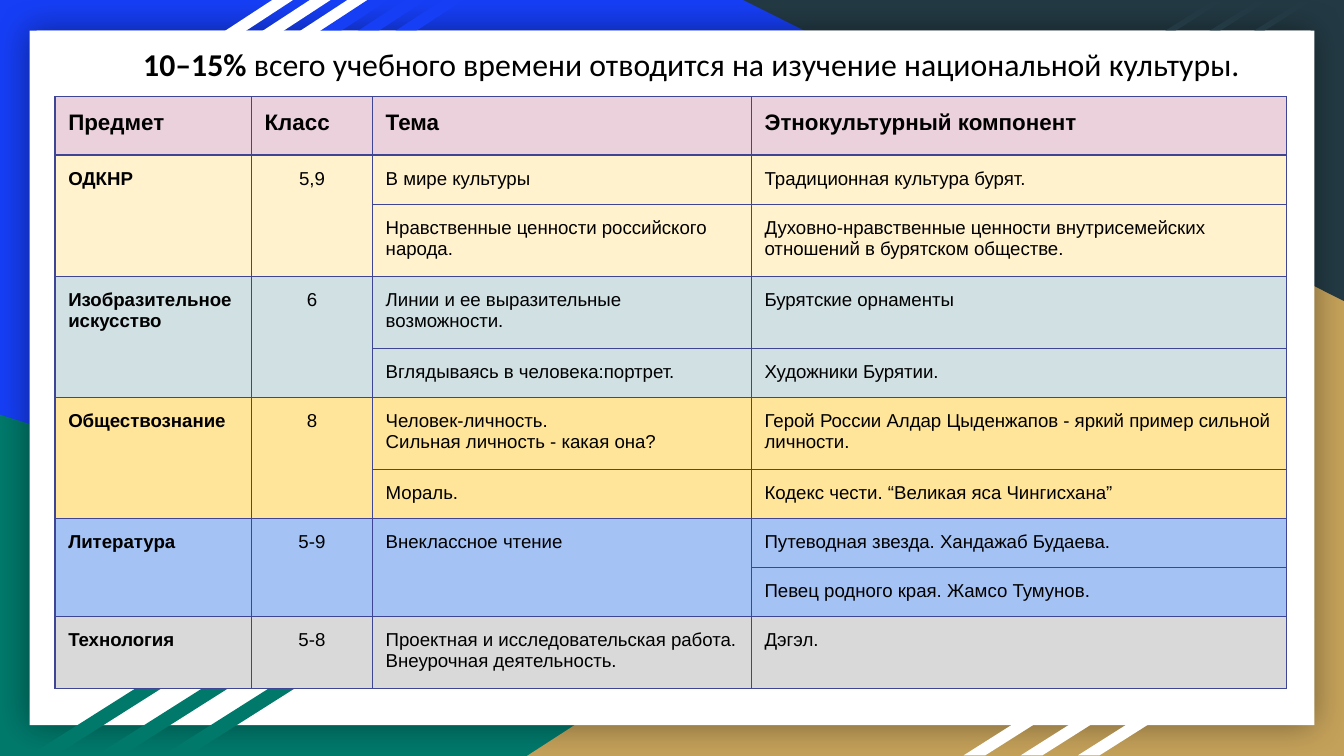
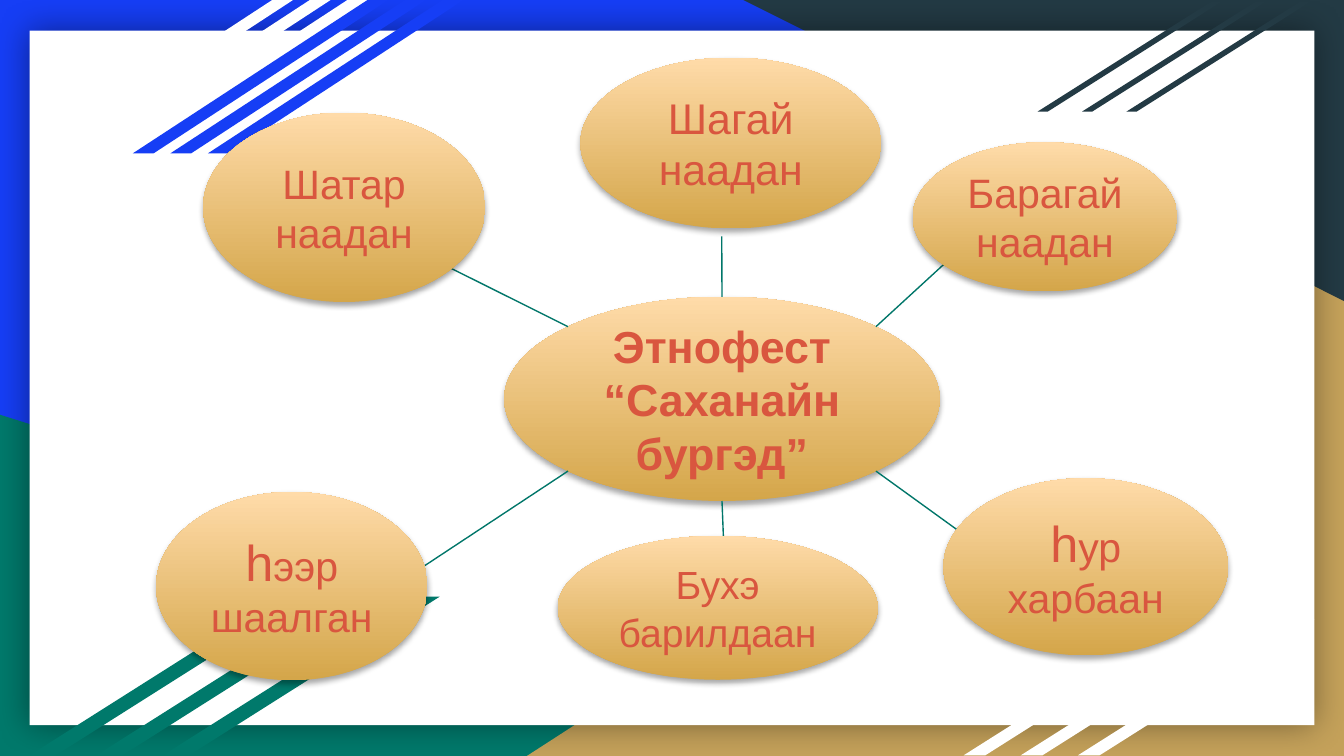
"""Build two slides on Buryat culture at school: a lesson table and a festival map."""
from dataclasses import dataclass
from math import cos, radians, sin
from typing import NamedTuple, Optional

from lxml import etree
from pptx import Presentation
from pptx.dml.color import RGBColor
from pptx.enum.shapes import MSO_CONNECTOR, MSO_SHAPE
from pptx.enum.text import MSO_ANCHOR, MSO_AUTO_SIZE, PP_ALIGN
from pptx.oxml.ns import qn
from pptx.slide import Slide
from pptx.util import Cm, Pt

TRIANGLE, PARALLELOGRAM = MSO_SHAPE.RIGHT_TRIANGLE, MSO_SHAPE.PARALLELOGRAM
RECTANGLE, OVAL = MSO_SHAPE.RECTANGLE, MSO_SHAPE.OVAL
STRAIGHT = MSO_CONNECTOR.STRAIGHT
CENTER, LEFT = PP_ALIGN.CENTER, PP_ALIGN.LEFT
MIDDLE = MSO_ANCHOR.MIDDLE
NO_FIT = MSO_AUTO_SIZE.NONE

BLUE = RGBColor(0x16, 0x3E, 0xF5)
GREEN = RGBColor(0x00, 0x79, 0x6B)
SAND = RGBColor(0xC4, 0xA1, 0x5A)
SLATE = RGBColor(0x23, 0x3A, 0x44)
WHITE = RGBColor(0xFF, 0xFF, 0xFF)
BLACK = RGBColor(0x00, 0x00, 0x00)
GRID = RGBColor(0x3D, 0x45, 0x94)
ROSE = RGBColor(0xEA, 0xD1, 0xDC)
CREAM = RGBColor(0xFF, 0xF2, 0xCC)
MIST = RGBColor(0xD0, 0xE0, 0xE3)
YELLOW = RGBColor(0xFF, 0xE5, 0x99)
SKY = RGBColor(0xA4, 0xC2, 0xF4)
GREY = RGBColor(0xD9, 0xD9, 0xD9)
GOLD = RGBColor(0xD4, 0xA6, 0x4A)
PEACH = RGBColor(0xFF, 0xDB, 0xA9)
CORAL = RGBColor(0xD9, 0x56, 0x3F)
RAY = RGBColor(0x00, 0x76, 0x69)

BODY_FONT, TITLE_FONT = "Arial", "Calibri"
TITLE_ONLY, BLANK = 5, 6


class Frame(NamedTuple):
    """Position and size in centimetres."""
    left: float
    top: float
    width: float
    height: float

    def lengths(self) -> list[Cm]:
        """Return the four values as lengths."""
        return [Cm(value) for value in self]


class Span(NamedTuple):
    """A piece of text in one format."""
    text: str
    size: float
    bold: bool = False


@dataclass(frozen=True)
class Stripes:
    """Three slanted bars at an equal step."""
    first: Frame
    step: float
    slant: float
    colour: RGBColor


@dataclass(frozen=True)
class Subject:
    """A school subject with its (topic, component) lessons."""
    name: str
    grade: str
    colour: RGBColor
    lessons: list[tuple[str, str]]


@dataclass(frozen=True)
class Game:
    """A game bubble and the ray that leads to it from the hub."""
    frame: Frame
    spans: list[Span]
    ray_angle: Optional[float] = None
    ray_tip: tuple[float, float] = (0, 0)


STRIPES = [
    Stripes(Frame(0.71, 0, 4.83, 2.9), 0.71, 1.53, WHITE),
    Stripes(Frame(2.51, 0, 4.83, 2.9), 0.71, 1.53, BLUE),
    Stripes(Frame(19.61, 0.03, 3.48, 2.08), 0.84, 1.58, SLATE),
    Stripes(Frame(18.21, 11.71, 4.47, 2.57), 1.08, 1.58, WHITE),
    Stripes(Frame(0.56, 11.28, 5.23, 3), 1.26, 1.58, GREEN),
]

HEADINGS = ["Предмет", "Класс", "Тема", "Этнокультурный компонент"]
SUBJECTS = [
    Subject("ОДКНР", "5,9", CREAM, [
        ("В мире культуры", "Традиционная культура бурят."),
        ("Нравственные ценности российского народа.",
         "Духовно-нравственные ценности внутрисемейских отношений в бурятском обществе."),
    ]),
    Subject("Изобразительное искусство", "6", MIST, [
        ("Линии и ее выразительные возможности.", "Бурятские орнаменты"),
        ("Вглядываясь в человека:портрет.", "Художники Бурятии."),
    ]),
    Subject("Обществознание", "8", YELLOW, [
        ("Человек-личность.\nСильная личность - какая она?",
         "Герой России Алдар Цыденжапов - яркий пример сильной личности."),
        ("Мораль.", "Кодекс чести. “Великая яса Чингисхана”"),
    ]),
    Subject("Литература", "5-9", SKY, [
        ("Внеклассное чтение", "Путеводная звезда. Хандажаб Будаева."),
        ("", "Певец родного края. Жамсо Тумунов."),
    ]),
    Subject("Технология", "5-8", GREY, [
        ("Проектная и исследовательская работа. Внеурочная деятельность.", "Дэгэл."),
    ]),
]
COLUMN_WIDTHS = [3.71, 2.29, 7.16, 10.11]
HEAD, SINGLE, DOUBLE = 1.1, 0.93, 1.36
ROW_HEIGHTS = [HEAD, SINGLE, DOUBLE, DOUBLE, SINGLE, DOUBLE, SINGLE, SINGLE, SINGLE, DOUBLE]

HUB = Game(Frame(9.53, 5.61, 8.23, 3.86), [Span("Этнофест “Саханайн бургэд”", 24, True)])
GAMES = [
    Game(Frame(17.25, 2.69, 5, 2.82), [Span("Барагай наадан", 22)], -45, (18.16, 4.7)),
    Game(Frame(10.97, 1.09, 5.69, 3.23), [Span("Шагай наадан", 23)], -90, (13.64, 4.47)),
    Game(Frame(3.84, 2.13, 5.33, 3.58), [Span("Шатар наадан", 22)], -135, (7.98, 4.8)),
    Game(Frame(2.95, 9.3, 5.13, 3.56), [Span("h", 27), Span("ээр шаалган", 22)],
         135, (8.03, 10.69)),
    Game(Frame(10.54, 10.13, 6.05, 2.72), [Span("Бухэ барилдаан", 21)], 90, (13.69, 10.62)),
    Game(Frame(17.83, 9.04, 5.38, 3.35), [Span("h", 27), Span("ур харбаан", 22)],
         45, (18.36, 10.21)),
]


def write_spans(para, spans: list[Span], font: str, colour: RGBColor, align=CENTER) -> None:
    """Fill a paragraph with formatted spans."""
    para.text = spans[0].text
    for span in spans[1:]:
        para.add_run().text = span.text
    para.alignment = align
    for run, span in zip(para.runs, spans):
        run.font.name, run.font.size, run.font.bold = font, Pt(span.size), span.bold
        run.font.color.rgb = colour


def add_figure(page: Slide, kind, frame: Frame, colour: RGBColor):
    """Add a flat preset shape without outline or shadow."""
    shape = page.shapes.add_shape(kind, *frame.lengths())
    shape.shadow.inherit = False
    shape.fill.solid()
    shape.fill.fore_color.rgb = colour
    shape.line.fill.background()
    return shape


def cast_shadow(shape, alpha: int, blur: float, distance: float, angle: int) -> None:
    """Give a shape a black outer shadow."""
    effects = shape.element.spPr.find(qn("a:effectLst"))
    shadow = etree.SubElement(effects, qn("a:outerShdw"), blurRad=str(Pt(blur)),
                              dist=str(Pt(distance)), dir=str(angle * 60000),
                              algn="bl", rotWithShape="0")
    tint = etree.SubElement(shadow, qn("a:srgbClr"), val=str(BLACK))
    etree.SubElement(tint, qn("a:alpha"), val=str(alpha * 1000))


def decorate_master(deck, page: Slide) -> None:
    """Draw the shared backdrop and move it to the slide master."""
    green = add_figure(page, TRIANGLE, Frame(0, 7.84, 20.47, 6.45), GREEN)
    sand = add_figure(page, TRIANGLE, Frame(9.96, 4.31, 15.44, 9.98), SAND)
    sand.element.spPr.xfrm.set("flipH", "1")
    slate = add_figure(page, TRIANGLE, Frame(14.05, 0, 11.35, 5.69), SLATE)
    slate.rotation = 180
    panel = add_figure(page, RECTANGLE, Frame(0.56, 0.58, 24.28, 13.13), WHITE)
    cast_shadow(panel, 40, 18, 0, 0)
    figures = [green, sand, slate, panel]
    for stripes in STRIPES:
        for index in range(3):
            left = stripes.first.left + index * stripes.step
            bar = add_figure(page, PARALLELOGRAM, stripes.first._replace(left=left),
                             stripes.colour)
            bar.adjustments[0] = stripes.slant
            figures.append(bar)

    master = deck.slide_master
    master.background.fill.solid()
    master.background.fill.fore_color.rgb = BLUE
    for index, figure in enumerate(figures):
        figure.element.nvSpPr.cNvPr.set("id", str(100 + index))
        master.shapes.element.insert(2 + index, figure.element)


def set_title(page: Slide) -> None:
    """Place and format the title of the table slide."""
    title = page.shapes.title
    title.left, title.top, title.width, title.height = Frame(0.69, 0.58, 24.08, 1.24).lengths()
    title.fill.solid()
    title.fill.fore_color.rgb = WHITE
    text_frame = title.text_frame
    text_frame.auto_size = NO_FIT
    text_frame.word_wrap = True
    text_frame.vertical_anchor = MIDDLE
    text_frame.margin_left = Cm(0.94)
    text_frame.margin_right = Cm(0.25)
    spans = [Span("10–15%", 17, True),
             Span(" всего учебного времени отводится на изучение национальной культуры.", 17)]
    write_spans(text_frame.paragraphs[0], spans, TITLE_FONT, BLACK)


def style_cell(cell, colour: RGBColor) -> None:
    """Set the fill, margins and borders of a cell."""
    cell.fill.solid()
    cell.fill.fore_color.rgb = colour
    cell.margin_left = cell.margin_right = cell.margin_top = cell.margin_bottom = Cm(0.25)
    properties = cell._tc.get_or_add_tcPr()
    for index, side in enumerate(("a:lnL", "a:lnR", "a:lnT", "a:lnB")):
        border = etree.Element(qn(side), w=str(Pt(0.75)))
        fill = etree.SubElement(border, qn("a:solidFill"))
        etree.SubElement(fill, qn("a:srgbClr"), val=str(GRID))
        properties.insert(index, border)


def write_cell(cell, text: str, size: float, bold: bool, align=LEFT) -> None:
    """Write text into a cell, one paragraph a line."""
    cell.text_frame.text = text
    for para in cell.text_frame.paragraphs:
        write_spans(para, [Span(para.text, size, bold)], BODY_FONT, BLACK, align)


def add_lesson_table(page: Slide) -> None:
    """Add the table of subjects and lessons."""
    frame = Frame(1.04, 1.83, sum(COLUMN_WIDTHS), sum(ROW_HEIGHTS))
    table = page.shapes.add_table(len(ROW_HEIGHTS), len(HEADINGS), *frame.lengths()).table
    table.horz_banding = False
    for column, width in zip(table.columns, COLUMN_WIDTHS):
        column.width = Cm(width)
    for row, height in zip(table.rows, ROW_HEIGHTS):
        row.height = Cm(height)
    colours = [ROSE] + [subject.colour for subject in SUBJECTS for _ in subject.lessons]
    for row, colour in zip(table.rows, colours):
        for cell in row.cells:
            style_cell(cell, colour)
    for column, heading in enumerate(HEADINGS):
        write_cell(table.cell(0, column), heading, 12, True)

    first = 1
    for subject in SUBJECTS:
        last = first + len(subject.lessons) - 1
        if last > first:
            for column in (0, 1):
                table.cell(first, column).merge(table.cell(last, column))
        write_cell(table.cell(first, 0), subject.name, 10, True)
        write_cell(table.cell(first, 1), subject.grade, 10, False, CENTER)
        for row, (topic, component) in enumerate(subject.lessons, first):
            write_cell(table.cell(row, 3), component, 10, False)
            if topic:
                write_cell(table.cell(row, 2), topic, 10, False)
            else:
                table.cell(row - 1, 2).merge(table.cell(row, 2))
        first = last + 1


def add_bubble(page: Slide, game: Game) -> None:
    """Add a golden oval with its label."""
    bubble = add_figure(page, OVAL, game.frame, GOLD)
    bubble.fill.gradient()
    bubble.fill.gradient_angle = 90
    for stop, colour in zip(bubble.fill.gradient_stops, (GOLD, PEACH)):
        stop.color.rgb = colour
    cast_shadow(bubble, 35, 3.1, 1.8, 90)
    bubble.text_frame.word_wrap = True
    bubble.text_frame.vertical_anchor = MIDDLE
    write_spans(bubble.text_frame.paragraphs[0], game.spans, BODY_FONT, CORAL)


def add_ray(page: Slide, game: Game) -> None:
    """Draw a line from the rim of the hub towards a game."""
    hub, angle = HUB.frame, radians(game.ray_angle)
    start_x = hub.left + hub.width / 2 * (1 + cos(angle))
    start_y = hub.top + hub.height / 2 * (1 + sin(angle))
    ends = [Cm(value) for value in (start_x, start_y, *game.ray_tip)]
    ray = page.shapes.add_connector(STRAIGHT, *ends)
    ray.line.color.rgb = RAY
    ray.line.width = Pt(0.75)
    etree.SubElement(ray.element.spPr, qn("a:effectLst"))


def main() -> None:
    """Build and save the deck."""
    deck = Presentation()
    deck.slide_width, deck.slide_height = Cm(25.4), Cm(14.29)
    lessons = deck.slides.add_slide(deck.slide_layouts[TITLE_ONLY])
    decorate_master(deck, lessons)
    set_title(lessons)
    add_lesson_table(lessons)

    festival = deck.slides.add_slide(deck.slide_layouts[BLANK])
    add_bubble(festival, HUB)
    for game in GAMES:
        add_ray(festival, game)
    for game in GAMES:
        add_bubble(festival, game)
    deck.save("out.pptx")


if __name__ == "__main__":
    main()
